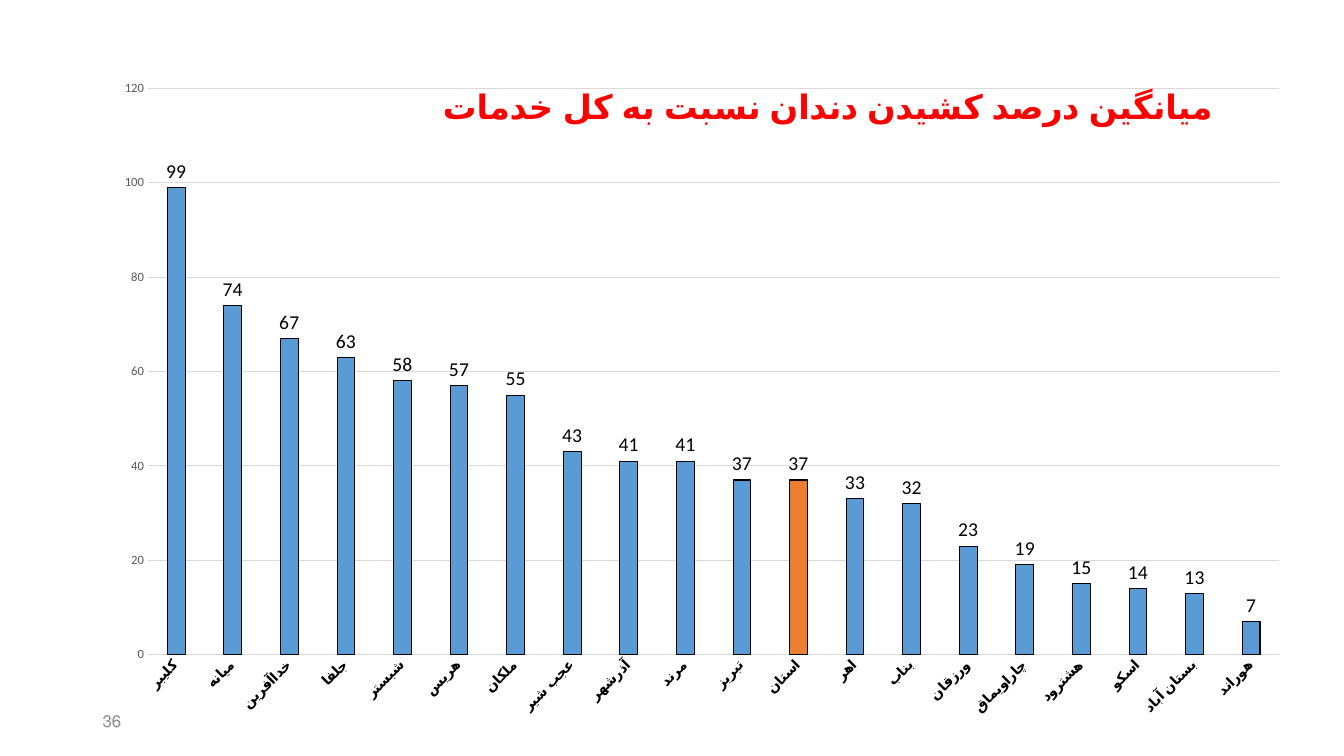
from typing import NamedTuple

from lxml.etree import SubElement
from pptx import Presentation
from pptx.chart.axis import CategoryAxis, ValueAxis
from pptx.chart.chart import Chart
from pptx.chart.data import CategoryChartData
from pptx.dml.color import RGBColor
from pptx.dml.line import LineFormat
from pptx.enum.chart import XL_CHART_TYPE, XL_LABEL_POSITION, XL_TICK_MARK
from pptx.enum.text import MSO_ANCHOR, PP_ALIGN
from pptx.oxml import parse_xml
from pptx.oxml.ns import nsdecls, qn
from pptx.slide import Slide
from pptx.text.text import Font
from pptx.util import Inches, Pt

BLACK = RGBColor(0x00, 0x00, 0x00)
RED = RGBColor(0xFF, 0x00, 0x00)
BLUE = RGBColor(0x5B, 0x9B, 0xD5)
ORANGE = RGBColor(0xED, 0x7D, 0x31)
GRID_GRAY = RGBColor(0xD9, 0xD9, 0xD9)
AXIS_GRAY = RGBColor(0x59, 0x59, 0x59)
NUMBER_GRAY = RGBColor(0x8C, 0x8C, 0x8C)
FONT_NAME = "Calibri"
TITLE = "میانگین درصد کشیدن دندان نسبت به کل خدمات"
PROVINCE = "استان"


class County(NamedTuple):
    name: str
    percent: int


COUNTIES = [
    County("کلیبر", 99),
    County("میانه", 74),
    County("خداآفرین", 67),
    County("جلفا", 63),
    County("شبستر", 58),
    County("هریس", 57),
    County("ملکان", 55),
    County("عجب شیر", 43),
    County("آذرشهر", 41),
    County("مرند", 41),
    County("تبریز", 37),
    County(PROVINCE, 37),
    County("اهر", 33),
    County("بناب", 32),
    County("ورزقان", 23),
    County("چاراویماق", 19),
    County("هشترود", 15),
    County("اسکو", 14),
    County("بستان آباد", 13),
    County("هوراند", 7),
]


def style_font(font: Font, size: float, color: RGBColor, bold: bool = False) -> None:
    font.name = FONT_NAME
    font.size = Pt(size)
    font.bold = bold
    font.color.rgb = color


def style_line(line: LineFormat, color: RGBColor) -> None:
    line.color.rgb = color
    line.width = Pt(0.75)


def place(parent, index: int, settings: dict[str, str | float]) -> None:
    """Give a chart part a manual layout, in fractions of the chart."""
    old_layout = parent.find(qn("c:layout"))
    if old_layout is not None:
        parent.remove(old_layout)
    layout = parse_xml(f"<c:layout {nsdecls('c')}><c:manualLayout/></c:layout>")
    for name, value in settings.items():
        SubElement(layout[0], qn(f"c:{name}")).set("val", str(value))
    parent.insert(index, layout)


def style_title(chart: Chart) -> None:
    chart.has_title = True
    title = chart.chart_title
    para = title.text_frame.paragraphs[0]
    para.text = TITLE
    style_font(para.font, 24, RED, bold=True)
    para._p.get_or_add_pPr().set("rtl", "1")
    title.include_in_layout = False
    place(title._element, 1, {"xMode": "edge", "yMode": "edge", "x": 0.29, "y": 0.07})


def style_category_axis(axis: CategoryAxis) -> None:
    axis.major_tick_mark = XL_TICK_MARK.NONE
    style_line(axis.format.line, GRID_GRAY)
    style_font(axis.tick_labels.font, 10, BLACK, bold=True)
    axis._element.find(qn("c:txPr")).find(qn("a:bodyPr")).set("rot", "-2700000")


def style_value_axis(axis: ValueAxis) -> None:
    axis.minimum_scale = 0
    axis.maximum_scale = 120
    axis.major_unit = 20
    axis.major_tick_mark = XL_TICK_MARK.NONE
    axis.format.line.fill.background()
    style_line(axis.major_gridlines.format.line, GRID_GRAY)
    style_font(axis.tick_labels.font, 9, AXIS_GRAY)


def style_bars(chart: Chart) -> None:
    plot = chart.plots[0]
    plot.gap_width = 219
    plot.overlap = -27
    plot.vary_by_categories = False
    series = plot.series[0]
    province_bar = series.points[[county.name for county in COUNTIES].index(PROVINCE)]
    for bar, color in ((series, BLUE), (province_bar, ORANGE)):
        bar.format.fill.solid()
        bar.format.fill.fore_color.rgb = color
        style_line(bar.format.line, BLACK)
    labels = series.data_labels
    labels.show_value = True
    labels.position = XL_LABEL_POSITION.OUTSIDE_END
    style_font(labels.font, 14, BLACK)


def add_county_chart(slide: Slide) -> None:
    data = CategoryChartData()
    data.categories = [county.name for county in COUNTIES]
    data.add_series("Series 1", [county.percent for county in COUNTIES])
    chart = slide.shapes.add_chart(
        XL_CHART_TYPE.COLUMN_CLUSTERED,
        Inches(0.87), Inches(0.33), Inches(11.94), Inches(6.85), data,
    ).chart
    chart.has_legend = False
    style_font(chart.font, 10, BLACK)
    style_title(chart)
    style_category_axis(chart.category_axis)
    style_value_axis(chart.value_axis)
    style_bars(chart)
    plot_area = chart._chartSpace.chart.plotArea
    place(plot_area, 0, {
        "layoutTarget": "inner", "xMode": "edge", "yMode": "edge",
        "x": 0.05, "y": 0.08, "w": 0.94, "h": 0.82,
    })


def add_page_number(slide: Slide) -> None:
    box = slide.shapes.add_textbox(Inches(0.92), Inches(6.95), Inches(3), Inches(0.4))
    frame = box.text_frame
    frame.word_wrap = True
    frame.vertical_anchor = MSO_ANCHOR.MIDDLE
    para = frame.paragraphs[0]
    para.text = "36"
    para.alignment = PP_ALIGN.LEFT
    para._p.get_or_add_pPr().set("rtl", "1")
    style_font(para.font, 12, NUMBER_GRAY)


def main() -> None:
    deck = Presentation()
    deck.slide_width = Inches(13.33)
    deck.slide_height = Inches(7.5)
    slide = deck.slides.add_slide(deck.slide_layouts[6])
    add_county_chart(slide)
    add_page_number(slide)
    deck.save("out.pptx")


if __name__ == "__main__":
    main()
